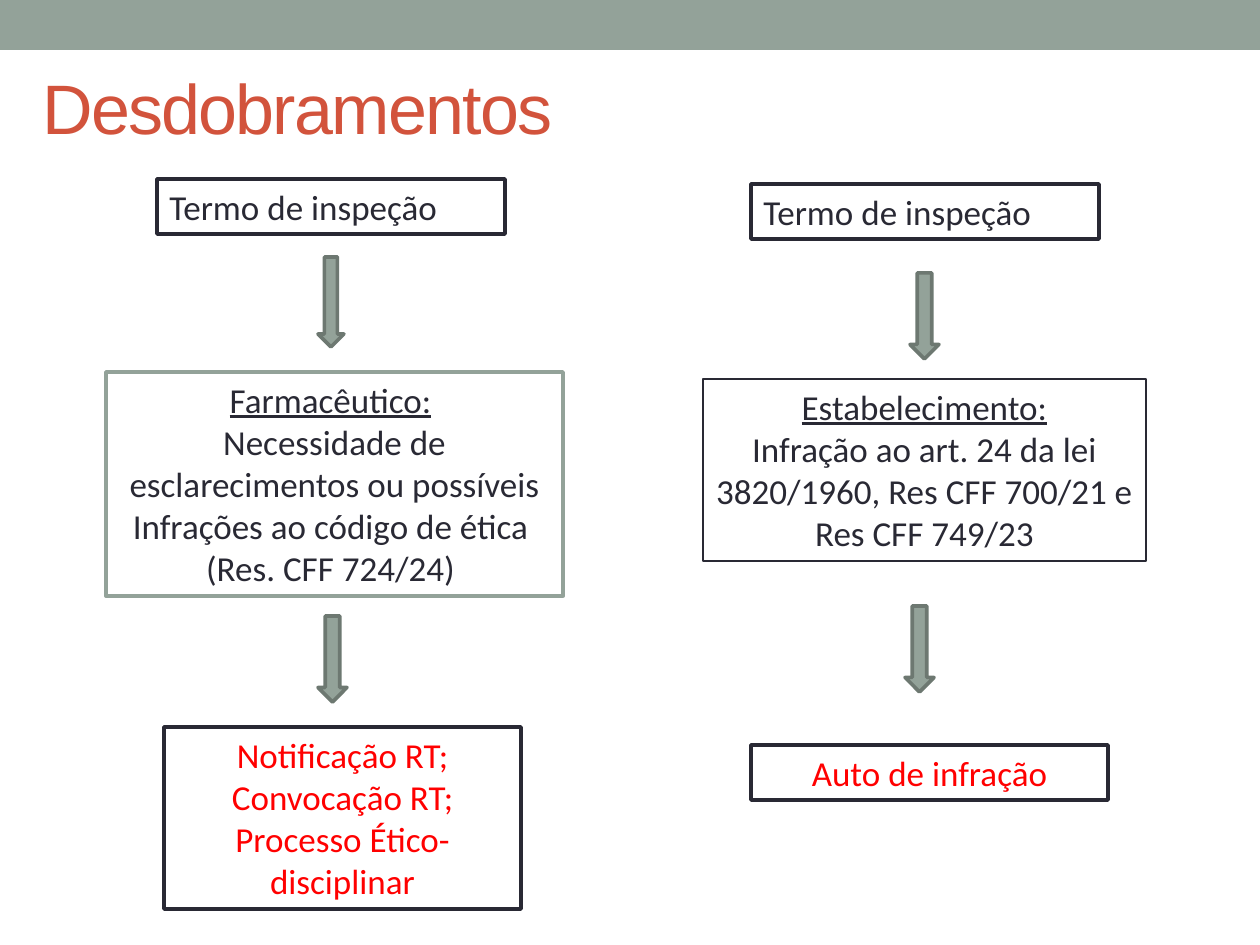
from dataclasses import dataclass

import pptx
import pptx.dml.color
import pptx.enum.shapes
import pptx.enum.text
import pptx.util

EMU_PER_PX = 914400 / 126
SHAPES = pptx.enum.shapes.MSO_SHAPE
ANCHOR = pptx.enum.text.MSO_ANCHOR
ALIGN = pptx.enum.text.PP_ALIGN

WHITE, DARK, SAGE, SAGE_EDGE = "FFFFFF", "292934", "93A299", "6D7871"
RED, RUST = "FF0000", "D2533C"


@dataclass(frozen=True)
class Area:
    left: int
    top: int
    width: int
    height: int


@dataclass(frozen=True)
class Step:
    area: Area
    lines: tuple[str, ...]
    heading: str = ""
    text_color: str = DARK
    edge: str = DARK
    edge_points: float = 2.08
    fill: str | None = WHITE
    align: ALIGN = ALIGN.CENTER


STEPS = [
    Step(Area(157, 179, 348, 55), ("Termo de inspeção",), align=ALIGN.LEFT),
    Step(
        Area(106, 372, 457, 224),
        (
            "Necessidade de esclarecimentos ou possíveis",
            "Infrações ao código de ética ",
            "(Res. CFF 724/24) ",
        ),
        heading="Farmacêutico: ",
        edge=SAGE,
    ),
    Step(
        Area(164, 727, 357, 182),
        ("Notificação RT; Convocação RT;", "Processo Ético-disciplinar"),
        text_color=RED,
    ),
    Step(Area(751, 184, 348, 55), ("Termo de inspeção",), align=ALIGN.LEFT),
    Step(
        Area(703, 379, 443, 182),
        ("Infração ao art. 24 da lei 3820/1960, Res CFF 700/21 e Res CFF 749/23",),
        heading="Estabelecimento:",
        edge_points=1.5,
        fill=None,
    ),
    Step(Area(751, 745, 357, 55), ("Auto de infração",), text_color=RED),
]

ARROWS = [
    Area(318, 257, 26, 90),
    Area(318, 616, 29, 86),
    Area(910, 273, 29, 86),
    Area(905, 606, 29, 86),
]


def px(length: int) -> pptx.util.Emu:
    return pptx.util.Emu(round(length * EMU_PER_PX))


def rgb(color: str) -> pptx.dml.color.RGBColor:
    return pptx.dml.color.RGBColor.from_string(color)


def bounds(area: Area) -> tuple[pptx.util.Emu, ...]:
    return px(area.left), px(area.top), px(area.width), px(area.height)


def add_shape(page, kind, area: Area, fill: str | None, edge: str | None = None,
              edge_points: float = 2.08):
    shape = page.shapes.add_shape(kind, *bounds(area))
    shape.shadow.inherit = False
    if fill:
        shape.fill.solid()
        shape.fill.fore_color.rgb = rgb(fill)
    else:
        shape.fill.background()
    if edge:
        shape.line.color.rgb = rgb(edge)
        shape.line.width = pptx.util.Pt(edge_points)
    else:
        shape.line.fill.background()
    return shape


def set_font(font, name: str, points: int, color: str) -> None:
    font.name = name
    font.size = pptx.util.Pt(points)
    font.color.rgb = rgb(color)


def add_heading(para, heading: str) -> None:
    """Underline the words, leaving any trailing space plain."""
    words = heading.rstrip()
    span = para.add_run()
    span.text = words
    span.font.underline = True
    if words != heading:
        para.add_run().text = heading[len(words):]


def add_step(page, step: Step) -> None:
    box = add_shape(page, SHAPES.RECTANGLE, step.area, step.fill, step.edge, step.edge_points)
    frame = box.text_frame
    frame.word_wrap = True
    frame.vertical_anchor = ANCHOR.TOP
    lines = (step.heading, *step.lines) if step.heading else step.lines
    for index, line in enumerate(lines):
        para = frame.add_paragraph() if index else frame.paragraphs[0]
        para.alignment = step.align
        set_font(para.font, "Calibri", 20, step.text_color)
        if line == step.heading:
            add_heading(para, line)
        else:
            para.add_run().text = line


def add_title(page, text: str, area: Area) -> None:
    frame = page.shapes.add_textbox(*bounds(area)).text_frame
    frame.word_wrap = True
    frame.vertical_anchor = ANCHOR.MIDDLE
    para = frame.paragraphs[0]
    set_font(para.font, "Arial", 40, RUST)
    span = para.add_run()
    span.text = text
    span.font._element.set("spc", "-100")


def main() -> None:
    deck = pptx.Presentation()
    deck.slide_width, deck.slide_height = px(1260), px(945)
    page = deck.slides.add_slide(deck.slide_layouts[6])
    add_shape(page, SHAPES.RECTANGLE, Area(0, 0, 1260, 50), SAGE)
    add_title(page, "Desdobramentos", Area(30, 48, 1018, 117))
    for step in STEPS:
        add_step(page, step)
    for arrow in ARROWS:
        add_shape(page, SHAPES.DOWN_ARROW, arrow, SAGE, SAGE_EDGE)
    deck.save("out.pptx")


if __name__ == "__main__":
    main()
